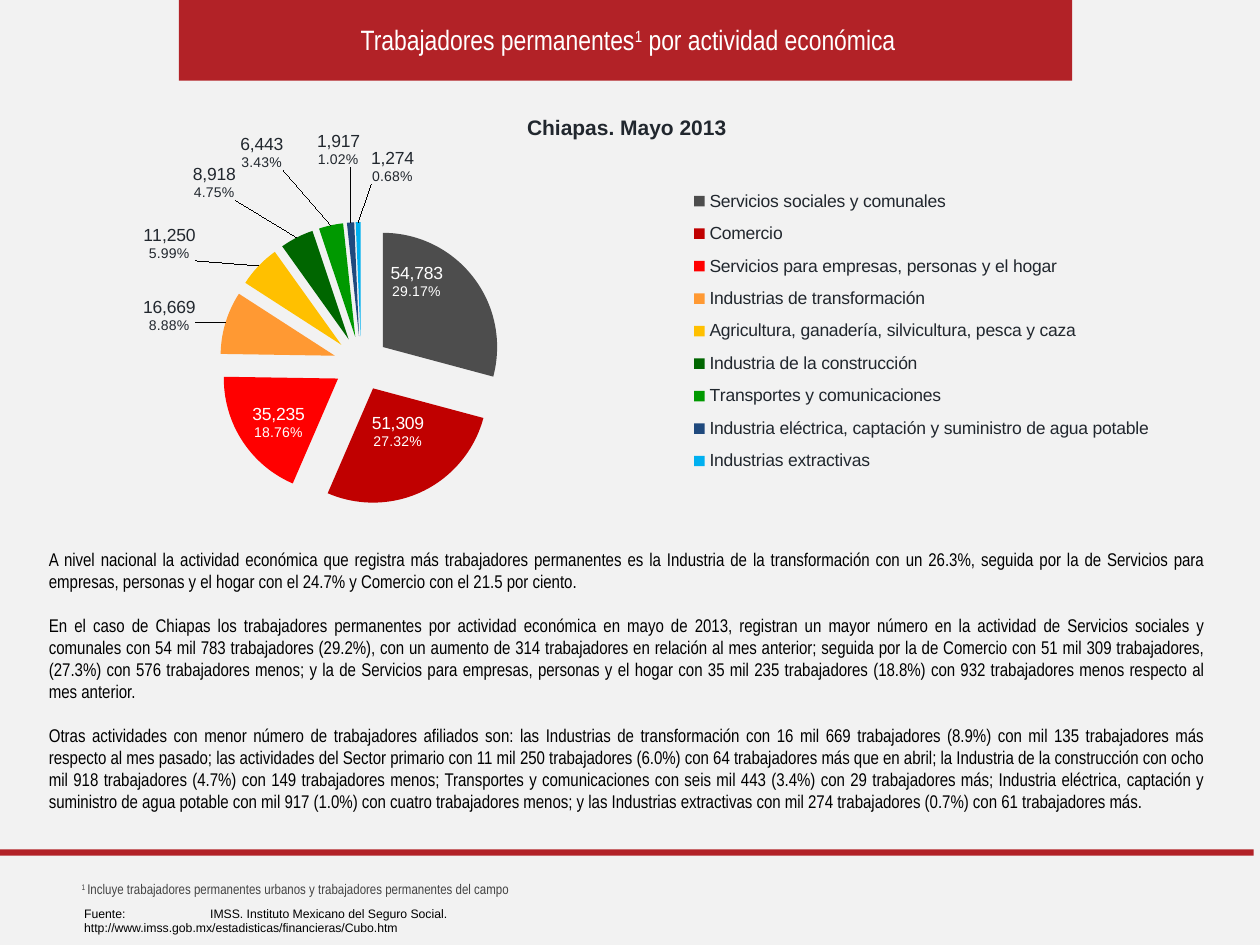
from dataclasses import dataclass

from lxml import etree
from pptx import Presentation
from pptx.chart.data import CategoryChartData
from pptx.dml.color import RGBColor
from pptx.enum.chart import XL_CHART_TYPE, XL_LABEL_POSITION, XL_LEGEND_POSITION
from pptx.enum.shapes import MSO_SHAPE
from pptx.enum.text import MSO_ANCHOR, PP_ALIGN
from pptx.oxml import parse_xml
from pptx.oxml.ns import nsdecls, qn
from pptx.util import Inches, Pt

PIE = XL_CHART_TYPE.PIE_EXPLODED
CENTER_LABEL, OUTSIDE_LABEL = XL_LABEL_POSITION.CENTER, XL_LABEL_POSITION.OUTSIDE_END
LEGEND_RIGHT = XL_LEGEND_POSITION.RIGHT
RECTANGLE, ROUNDED = MSO_SHAPE.RECTANGLE, MSO_SHAPE.ROUNDED_RECTANGLE
MIDDLE = MSO_ANCHOR.MIDDLE
CENTER, JUSTIFY, LEFT = PP_ALIGN.CENTER, PP_ALIGN.JUSTIFY, PP_ALIGN.LEFT


@dataclass(frozen=True)
class Theme:
    background: str = "F2F2F2"
    accent: str = "B22227"
    white: str = "FFFFFF"
    black: str = "000000"
    note: str = "434343"
    chart_text: str = "21272E"
    narrow: str = "Arial Narrow"
    sans: str = "Arial"
    title_size: float = 16
    body_size: float = 10.5
    paragraph_gap: float = 12.5
    note_size: float = 8
    source_size: float = 7
    chart_title_size: float = 12
    chart_size: float = 10
    percent_size: float = 8


@dataclass(frozen=True)
class Activity:
    name: str
    workers: int
    color: str
    label_shift: tuple[float, float]
    inside: bool = False


THEME = Theme()
ACTIVITIES = [
    Activity("Servicios sociales y comunales", 54783, "4D4D4D", (-0.01, -0.07), True),
    Activity("Comercio", 51309, "C00000", (0, -0.02), True),
    Activity("Servicios para empresas, personas y el hogar", 35235, "FF0000", (-0.01, 0.03), True),
    Activity("Industrias de transformación", 16669, "FF9933", (-0.02, 0.03)),
    Activity("Agricultura, ganadería, silvicultura, pesca y caza", 11250, "FFC000", (-0.05, 0)),
    Activity("Industria de la construcción", 8918, "006600", (-0.05, -0.07)),
    Activity("Transportes y comunicaciones", 6443, "009900", (-0.04, -0.11)),
    Activity("Industria eléctrica, captación y suministro de agua potable", 1917, "1F497D", (-0.01, -0.11)),
    Activity("Industrias extractivas", 1274, "00B0F0", (0.03, -0.07)),
]
BODY = [
    "A nivel nacional la actividad económica que registra más trabajadores permanentes es la Industria de la transformación con un 26.3%, seguida por la de Servicios para empresas, personas y el hogar con el 24.7% y Comercio con el 21.5 por ciento.",
    "En el caso de Chiapas los trabajadores permanentes por actividad económica en mayo de 2013, registran un mayor número en la actividad de Servicios sociales y comunales con 54 mil 783 trabajadores (29.2%), con un aumento de 314 trabajadores en relación al mes anterior; seguida por la de Comercio con 51 mil 309 trabajadores, (27.3%) con 576 trabajadores menos; y la de Servicios para empresas, personas y el hogar con 35 mil 235 trabajadores (18.8%) con 932 trabajadores menos respecto al mes anterior.",
    "Otras actividades con menor número de trabajadores afiliados son: las Industrias de transformación con 16 mil 669 trabajadores (8.9%) con mil 135 trabajadores más respecto al mes pasado; las actividades del Sector primario con 11 mil 250 trabajadores (6.0%) con 64 trabajadores más que en abril; la Industria de la construcción con ocho mil 918 trabajadores (4.7%) con 149 trabajadores menos; Transportes y comunicaciones con seis mil 443 (3.4%) con 29 trabajadores más; Industria eléctrica, captación y suministro de agua potable con mil 917 (1.0%) con cuatro trabajadores menos; y las Industrias extractivas con mil 274 trabajadores (0.7%) con 61 trabajadores más.",
]


def style(font, name: str, size: float, color: str, bold: bool = False) -> None:
    font.name, font.size, font.bold = name, Pt(size), bold
    font.color.rgb = RGBColor.from_string(color)


def add_block(slide, kind, left: float, top: float, width: float, height: float, color: str | None = None):
    block = slide.shapes.add_shape(kind, Inches(left), Inches(top), Inches(width), Inches(height))
    block.shadow.inherit = False
    block.line.fill.background()
    if color:
        block.fill.solid()
        block.fill.fore_color.rgb = RGBColor.from_string(color)
    else:
        block.fill.background()
    return block


def add_line_of_text(slide, left: float, top: float, width: float, height: float, text: str,
                     name: str, size: float, color: str, align=LEFT):
    """Add a text box; a part between ^ marks is raised."""
    box = slide.shapes.add_textbox(Inches(left), Inches(top), Inches(width), Inches(height))
    box.text_frame.word_wrap = True
    para = box.text_frame.paragraphs[0]
    para.alignment = align
    for index, part in enumerate(text.split("^")):
        if not part:
            continue
        span = para.add_run()
        span.text = part
        style(span.font, name, size, color)
        if index % 2:
            span.font._element.set("baseline", "30000")
    return para


def add_body(slide) -> None:
    box = add_block(slide, ROUNDED, 0.29, 4.1, 9.37, 2.6)
    box.adjustments[0] = 0
    frame = box.text_frame
    frame.word_wrap, frame.vertical_anchor = True, MIDDLE
    for index, text in enumerate(BODY):
        para = frame.add_paragraph() if index else frame.paragraphs[0]
        para.text, para.alignment = text, JUSTIFY
        para.space_before = Pt(THEME.paragraph_gap if index else 0)
        style(para.runs[0].font, THEME.narrow, THEME.body_size, THEME.black)


def manual_layout(x: float, y: float, size: tuple[float, float] | None = None, inner: bool = False):
    settings = [("layoutTarget", "inner")] if inner else []
    if size:
        settings += [("xMode", "edge"), ("yMode", "edge")]
    settings += [("x", x), ("y", y)]
    if size:
        settings += [("w", size[0]), ("h", size[1])]
    tags = "".join(f'<c:{tag} val="{value}"/>' for tag, value in settings)
    return parse_xml(f'<c:layout {nsdecls("c")}><c:manualLayout>{tags}</c:manualLayout></c:layout>')


def replace_layout(parent, layout, after: str | None = None) -> None:
    for old in parent.findall(qn("c:layout")):
        parent.remove(old)
    if after:
        parent.find(qn(after)).addnext(layout)
    else:
        parent.insert(0, layout)


def format_label(point, activity: Activity, total: int) -> None:
    label = point.data_label
    frame = label.text_frame
    frame.text = f"{activity.workers:,}"
    frame.add_paragraph().text = f"{activity.workers / total:.2%}"
    color = THEME.white if activity.inside else THEME.chart_text
    for para, size in zip(frame.paragraphs, (THEME.chart_size, THEME.percent_size)):
        style(para.runs[0].font, THEME.sans, size, color)
    label.position = CENTER_LABEL if activity.inside else OUTSIDE_LABEL
    replace_layout(label._dLbl, manual_layout(*activity.label_shift), "c:idx")


def add_pie(slide) -> None:
    data = CategoryChartData()
    data.categories = [activity.name for activity in ACTIVITIES]
    data.add_series("Series 1", [activity.workers for activity in ACTIVITIES])
    chart = slide.shapes.add_chart(PIE, Inches(0.39), Inches(0.76), Inches(9.17), Inches(3.46), data).chart
    style(chart.font, THEME.sans, THEME.chart_size, THEME.chart_text)

    # Title and legend
    chart.has_title = True
    title = chart.chart_title.text_frame
    title.text = "Chiapas. Mayo 2013"
    style(title.paragraphs[0].runs[0].font, THEME.sans, THEME.chart_title_size, THEME.chart_text, True)
    chart.has_legend = True
    chart.legend.position = LEGEND_RIGHT
    chart.legend.include_in_layout = False
    style(chart.legend.font, THEME.sans, THEME.chart_size, THEME.chart_text)
    replace_layout(chart.legend._element, manual_layout(0.54, 0.19, (0.43, 0.7)), "c:legendPos")
    replace_layout(chart._chartSpace.chart.plotArea, manual_layout(0.02, 0.29, (0.5, 0.65), True))

    # Slices and labels
    plot = chart.plots[0]
    plot.vary_by_categories = True
    series = plot.series[0]
    labels = series.data_labels
    labels.show_value = labels.show_percentage = True
    labels.number_format, labels.number_format_is_linked = "0.00%", False
    total = sum(activity.workers for activity in ACTIVITIES)
    for index, activity in enumerate(ACTIVITIES):
        point = series.points[index]
        point.format.fill.solid()
        point.format.fill.fore_color.rgb = RGBColor.from_string(activity.color)
        format_label(point, activity, total)
    leader = labels._element.find(qn("c:showLeaderLines"))
    if leader is None:
        leader = etree.SubElement(labels._element, qn("c:showLeaderLines"))
    leader.set("val", "1")

    # Slice separation
    for old in series._element.findall(qn("c:explosion")):
        series._element.remove(old)
    explosion = parse_xml(f'<c:explosion {nsdecls("c")} val="24"/>')
    series._element.find(qn("c:dPt")).addprevious(explosion)


def main() -> None:
    deck = Presentation()
    deck.slide_width, deck.slide_height = Inches(10), Inches(7.5)
    page = deck.slides.add_slide(deck.slide_layouts[6])
    page.background.fill.solid()
    page.background.fill.fore_color.rgb = RGBColor.from_string(THEME.background)

    # Header band and footer rule
    add_block(page, RECTANGLE, 1.42, 0, 7.09, 0.64, THEME.accent)
    add_block(page, RECTANGLE, 0, 6.74, 9.95, 0.05, THEME.accent)

    # Commentary, title and footer
    add_body(page)
    add_line_of_text(page, 0.55, 6.94, 3.82, 0.24,
                     "^1 ^Incluye trabajadores permanentes urbanos y trabajadores permanentes del campo",
                     THEME.narrow, THEME.note_size, THEME.note)
    add_line_of_text(page, 1.46, 0.13, 7.05, 0.37, "Trabajadores permanentes^1^ por actividad económica",
                     THEME.narrow, THEME.title_size, THEME.white, CENTER)
    source = add_line_of_text(page, 0.57, 7.14, 5.08, 0.22,
                              "Fuente:\tIMSS. Instituto Mexicano del Seguro Social. ",
                              THEME.sans, THEME.source_size, THEME.black)
    tabs = etree.SubElement(source._p.get_or_add_pPr(), qn("a:tabLst"))
    etree.SubElement(tabs, qn("a:tab"), pos=str(Inches(1)), algn="l")
    source.add_line_break()
    address = source.add_run()
    address.text = "http://www.imss.gob.mx/estadisticas/financieras/Cubo.htm"
    style(address.font, THEME.sans, THEME.source_size, THEME.black)

    add_pie(page)
    deck.save("out.pptx")


if __name__ == "__main__":
    main()
